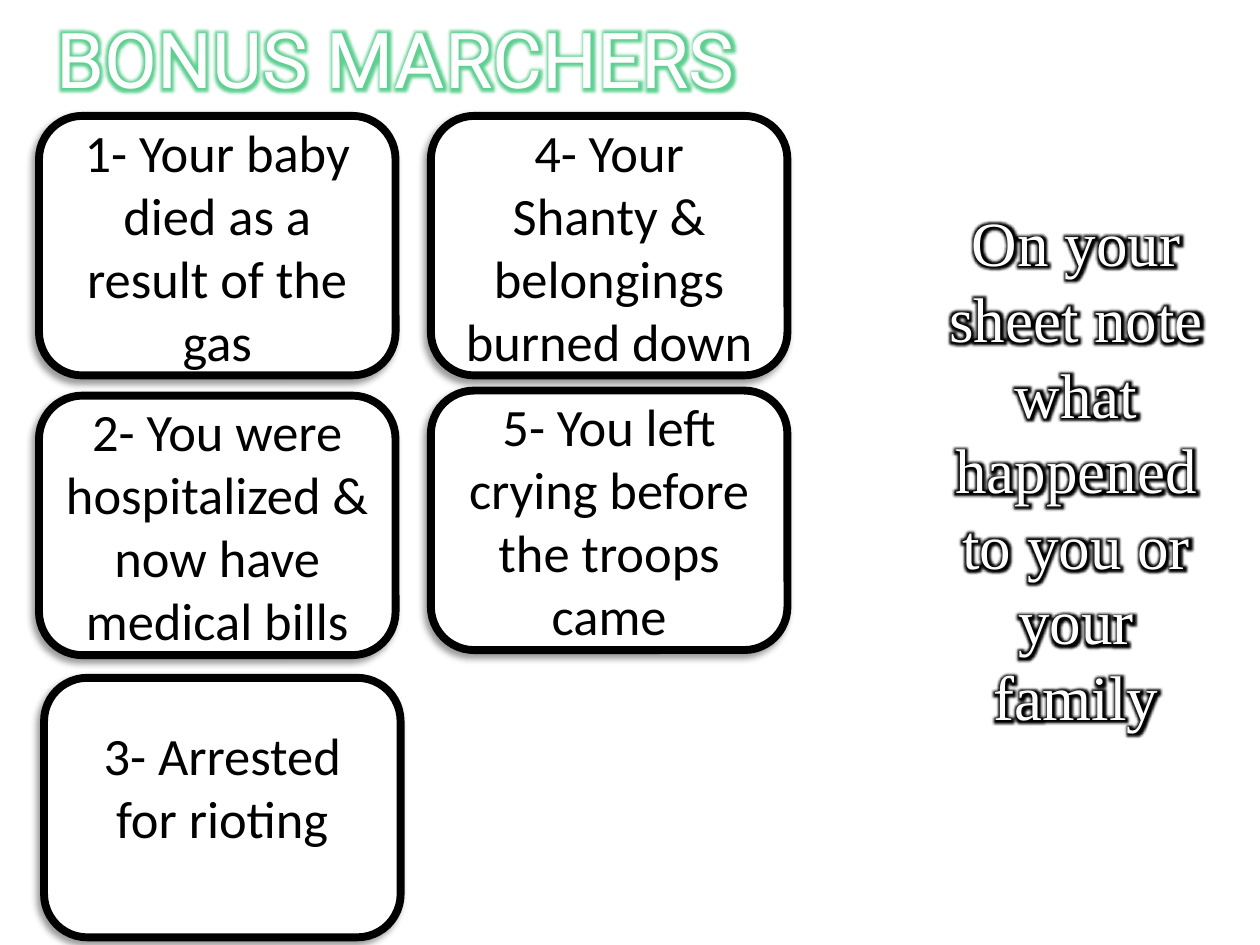
from lxml import etree
from pptx import Presentation
from pptx.dml.color import RGBColor
from pptx.enum.shapes import MSO_SHAPE
from pptx.enum.text import MSO_ANCHOR, PP_ALIGN
from pptx.oxml.ns import qn
from pptx.util import Pt

BLACK = RGBColor(0, 0, 0)
WHITE = RGBColor(255, 255, 255)
GREEN = RGBColor(0x5F, 0xD0, 0x92)
ROUND = MSO_SHAPE.ROUNDED_RECTANGLE
LEFT, CENTER = PP_ALIGN.LEFT, PP_ALIGN.CENTER
TOP, MIDDLE = MSO_ANCHOR.TOP, MSO_ANCHOR.MIDDLE

CARD_W, CARD_H = 203.76, 148.32
CARDS = [
    (22.32, 66.24, "1- Your baby died as a result of the gas", 0),
    (246.24, 66.24, "4- Your Shanty & belongings burned down", 0),
    (22.32, 226.08, "2- You were hospitalized & now have medical bills", 0),
    (246.24, 223.2, "5- You left crying before the troops came", 0),
    (25.2, 387.36, "3- Arrested for rioting", 24),
]


def add_color(parent, color, alpha=100):
    tint = etree.SubElement(parent, qn("a:srgbClr"), val=str(color))
    if alpha < 100:
        etree.SubElement(tint, qn("a:alpha"), val=str(alpha * 1000))


def add_shadow(shape):
    """Cast a soft shadow down and to the left."""
    shape.shadow.inherit = False
    effects = shape._element.spPr.find(qn("a:effectLst"))
    cast = etree.SubElement(
        effects, qn("a:outerShdw"), blurRad=str(Pt(4)), dist=str(Pt(3)),
        dir=str(135 * 60000), algn="tr", rotWithShape="0")
    add_color(cast, BLACK, 40)


def add_glow(run, color, size):
    """Set a glow behind the letters; it must come before the font name."""
    props = run.font._element
    effects = etree.Element(qn("a:effectLst"))
    glow = etree.SubElement(effects, qn("a:glow"), rad=str(Pt(size)))
    add_color(glow, color)
    props.find(qn("a:latin")).addprevious(effects)


def write(shape, text, font="Calibri", size=30, color=BLACK, align=CENTER,
          anchor=MIDDLE, glow=None, lift=0):
    frame = shape.text_frame
    frame.word_wrap = True
    frame.vertical_anchor = anchor
    frame.margin_bottom = Pt(3.6 + lift)
    para = frame.paragraphs[0]
    para.alignment = align
    run = para.add_run()
    run.text = text
    run.font.name = font
    run.font.size = Pt(size)
    run.font.color.rgb = color
    if glow is not None:
        add_glow(run, glow, 8)


def add_card(slide, x, y, w, h, text, lift):
    card = slide.shapes.add_shape(ROUND, Pt(x), Pt(y), Pt(w), Pt(h))
    card.fill.solid()
    card.fill.fore_color.rgb = WHITE
    card.line.color.rgb = BLACK
    card.line.width = Pt(4.5)
    add_shadow(card)
    write(card, text, lift=lift)


def add_label(slide, x, y, w, h, text, **style):
    box = slide.shapes.add_textbox(Pt(x), Pt(y), Pt(w), Pt(h))
    write(box, text, color=WHITE, **style)


def main():
    deck = Presentation()
    deck.slide_width, deck.slide_height = Pt(720), Pt(540)
    slide = deck.slides.add_slide(deck.slide_layouts[6])
    for x, y, text, lift in CARDS:
        add_card(slide, x, y, CARD_W, CARD_H, text, lift)
    add_label(slide, 524.88, 113.04, 180, 312.48,
              "On your sheet note what happened to you or your family",
              font="Times New Roman", size=36, anchor=TOP, glow=BLACK)
    add_label(slide, 25.2, -12.24, 658.08, 90, "BONUS MARCHERS",
              font="Roboto", size=44, align=LEFT, glow=GREEN)
    deck.save("out.pptx")


if __name__ == "__main__":
    main()
